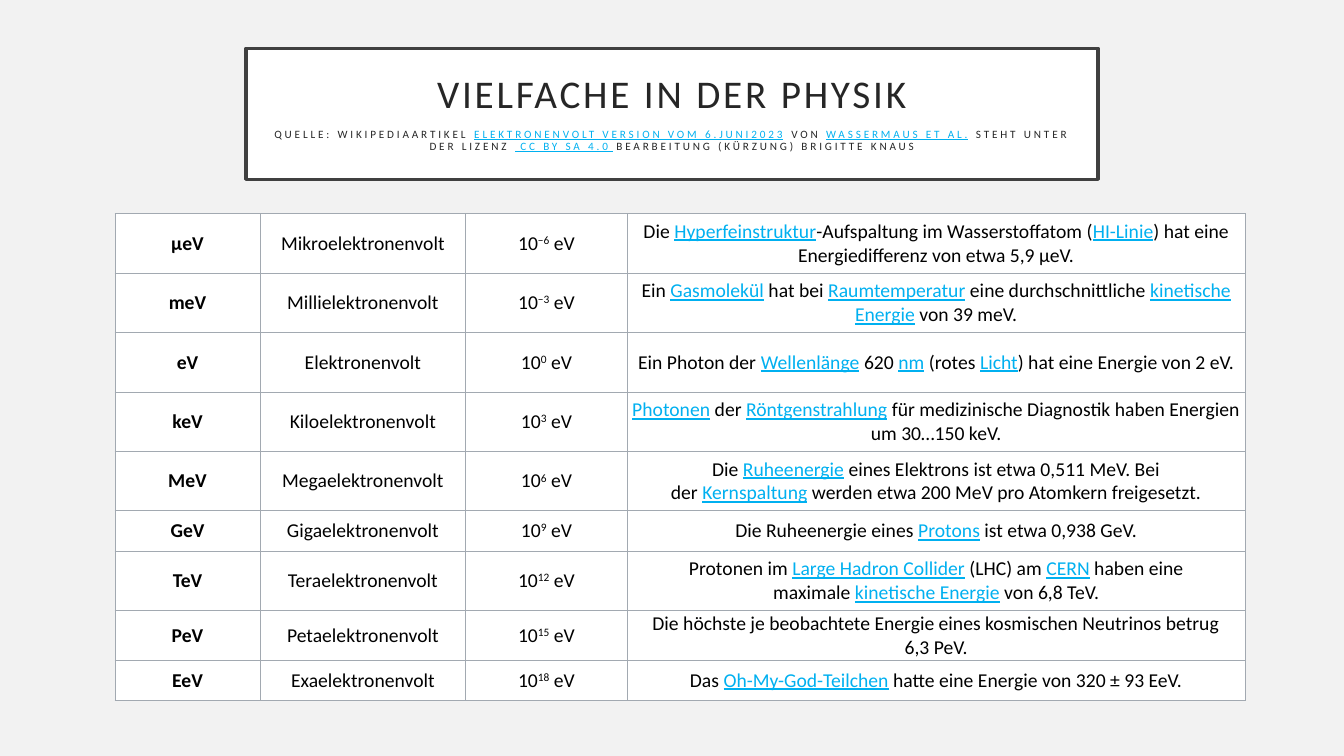
"""Build a slide with a table of electronvolt multiples in physics."""
from lxml.etree import SubElement
from pptx import Presentation
from pptx.dml.color import RGBColor as RGB
from pptx.enum.shapes import MSO_SHAPE as SHAPE
from pptx.enum.text import MSO_ANCHOR as ANCHOR, PP_ALIGN as ALIGN
from pptx.oxml.ns import qn
from pptx.util import Inches, Pt

TITLE = "VIELFACHE IN DER PHYSIK"
SOURCE = ("QUELLE: WIKIPEDIAARTIKEL [ELEKTRONENVOLT VERSION VOM 6.JUNI2023] VON~"
          "[WASSERMAUS ET AL.] STEHT UNTER DER LIZENZ~[ CC BY SA 4.0 ]"
          "BEARBEITUNG (KÜRZUNG) BRIGITTE KNAUS")
MULTIPLES = [
    ("μeV", "Mikroelektronenvolt", "−6",
     "Die~[Hyperfeinstruktur]-Aufspaltung im Wasserstoffatom ([HI-Linie]) "
     "hat eine Energiedifferenz von etwa 5,9~μeV."),
    ("meV", "Millielektronenvolt", "−3",
     "Ein~[Gasmolekül]~hat bei~[Raumtemperatur]~eine durchschnittliche~"
     "[kinetische Energie]~von 39~meV."),
    ("eV", "Elektronenvolt", "0",
     "Ein Photon der~[Wellenlänge]~620~[nm]~(rotes~[Licht]) hat eine Energie von 2~eV."),
    ("keV", "Kiloelektronenvolt", "3",
     "[Photonen]~der~[Röntgenstrahlung]~für medizinische Diagnostik "
     "haben Energien um 30…150~keV."),
    ("MeV", "Megaelektronenvolt", "6",
     "Die~[Ruheenergie]~eines Elektrons ist etwa 0,511~MeV. Bei der~"
     "[Kernspaltung]~werden etwa 200~MeV pro Atomkern freigesetzt."),
    ("GeV", "Gigaelektronenvolt", "9",
     "Die Ruheenergie eines~[Protons]~ist etwa 0,938~GeV."),
    ("TeV", "Teraelektronenvolt", "12",
     "Protonen im~[Large Hadron Collider]~(LHC) am~[CERN]~haben eine maximale~"
     "[kinetische Energie]~von 6,8~TeV."),
    ("PeV", "Petaelektronenvolt", "15",
     "Die höchste je beobachtete Energie eines kosmischen Neutrinos betrug 6,3~PeV."),
    ("EeV", "Exaelektronenvolt", "18",
     "Das~[Oh-My-God-Teilchen]~hatte eine Energie von 320~±~93~EeV."),
]
COL_WIDTHS = (1.44, 2.04, 1.6, 6.13)
TALL, SHORT = 0.59, 0.4
ROW_HEIGHTS = (TALL,) * 5 + (SHORT, TALL, SHORT, SHORT)
THEME = dict(font="Calibri", back="F2F2F2", white="FFFFFF", frame="404040",
             title="262626", body="000000", link="00B0F0", border="A2A9B1",
             title_size=28, source_size=8, body_size=14)
NBSP = chr(160)


def color(name):
    return RGB.from_string(THEME[name])


def add_run(p, text, size, tone, bold=False, **attrs):
    r = p.add_run()
    r.text = text.replace("~", NBSP)
    r.font.name = THEME["font"]
    r.font.size = Pt(THEME[size])
    r.font.bold = bold
    r.font.color.rgb = color(tone)
    for key, value in attrs.items():
        r.font._element.set(key, value)
    return r


def add_linked(p, text, size, tone, **attrs):
    """Add runs to a paragraph, styling the [bracketed] parts as links."""
    for i, part in enumerate(text.replace("]", "[").split("[")):
        if part:
            is_link = i % 2 == 1
            r = add_run(p, part, size, "link" if is_link else tone, **attrs)
            r.font.underline = is_link


def add_title(slide):
    sp = slide.shapes.add_shape(SHAPE.RECTANGLE, Inches(2.44), Inches(0.48),
                                Inches(8.45), Inches(1.3))
    sp.shadow.inherit = False
    sp.fill.solid()
    sp.fill.fore_color.rgb = color("white")
    sp.line.color.rgb = color("frame")
    sp.line.width = Pt(2.5)
    tf = sp.text_frame
    tf.word_wrap = True
    tf.vertical_anchor = ANCHOR.MIDDLE
    tf.margin_left = tf.margin_right = tf.margin_top = tf.margin_bottom = Inches(0.2)
    heading, source = tf.paragraphs[0], tf.add_paragraph()
    for p in (heading, source):
        p.alignment = ALIGN.CENTER
        p.line_spacing = 0.9
    source.space_before = Pt(8.5)
    add_run(heading, TITLE, "title_size", "title", spc="200")
    add_linked(source, SOURCE, "source_size", "title", spc="200")


def style_cell(cell):
    cell.vertical_anchor = ANCHOR.MIDDLE
    cell.margin_left = cell.margin_right = Inches(0.02)
    cell.margin_top = cell.margin_bottom = Inches(0.01)
    tc_pr = cell._tc.get_or_add_tcPr()
    for side in ("a:lnL", "a:lnR", "a:lnT", "a:lnB"):
        ln = SubElement(tc_pr, qn(side), w=str(Pt(0.75)))
        fill = SubElement(ln, qn("a:solidFill"))
        SubElement(fill, qn("a:srgbClr"), val=THEME["border"])
    cell.fill.solid()
    cell.fill.fore_color.rgb = color("white")


def add_multiples(slide):
    table = slide.shapes.add_table(
        len(MULTIPLES), len(COL_WIDTHS), Inches(1.14), Inches(2.12),
        Inches(sum(COL_WIDTHS)), Inches(sum(ROW_HEIGHTS))).table
    table.first_row = table.horz_banding = False
    for column, width in zip(table.columns, COL_WIDTHS):
        column.width = Inches(width)
    style = ("body_size", "body")
    for row, height, values in zip(table.rows, ROW_HEIGHTS, MULTIPLES):
        row.height = Inches(height)
        paragraphs = []
        for cell in row.cells:
            style_cell(cell)
            p = cell.text_frame.paragraphs[0]
            p.alignment = ALIGN.CENTER
            paragraphs.append(p)
        unit, name, power, example = paragraphs
        add_run(unit, values[0], *style, bold=True)
        add_run(name, values[1], *style)
        add_run(power, "10", *style)
        add_run(power, values[2], *style, baseline="30000")
        add_run(power, "~eV", *style)
        add_linked(example, values[3], *style)


def main():
    prs = Presentation()
    prs.slide_width, prs.slide_height = Inches(13.33), Inches(7.5)
    s = prs.slides.add_slide(prs.slide_layouts[6])
    s.background.fill.solid()
    s.background.fill.fore_color.rgb = color("back")
    add_title(s)
    add_multiples(s)
    prs.save("out.pptx")


if __name__ == "__main__":
    main()
